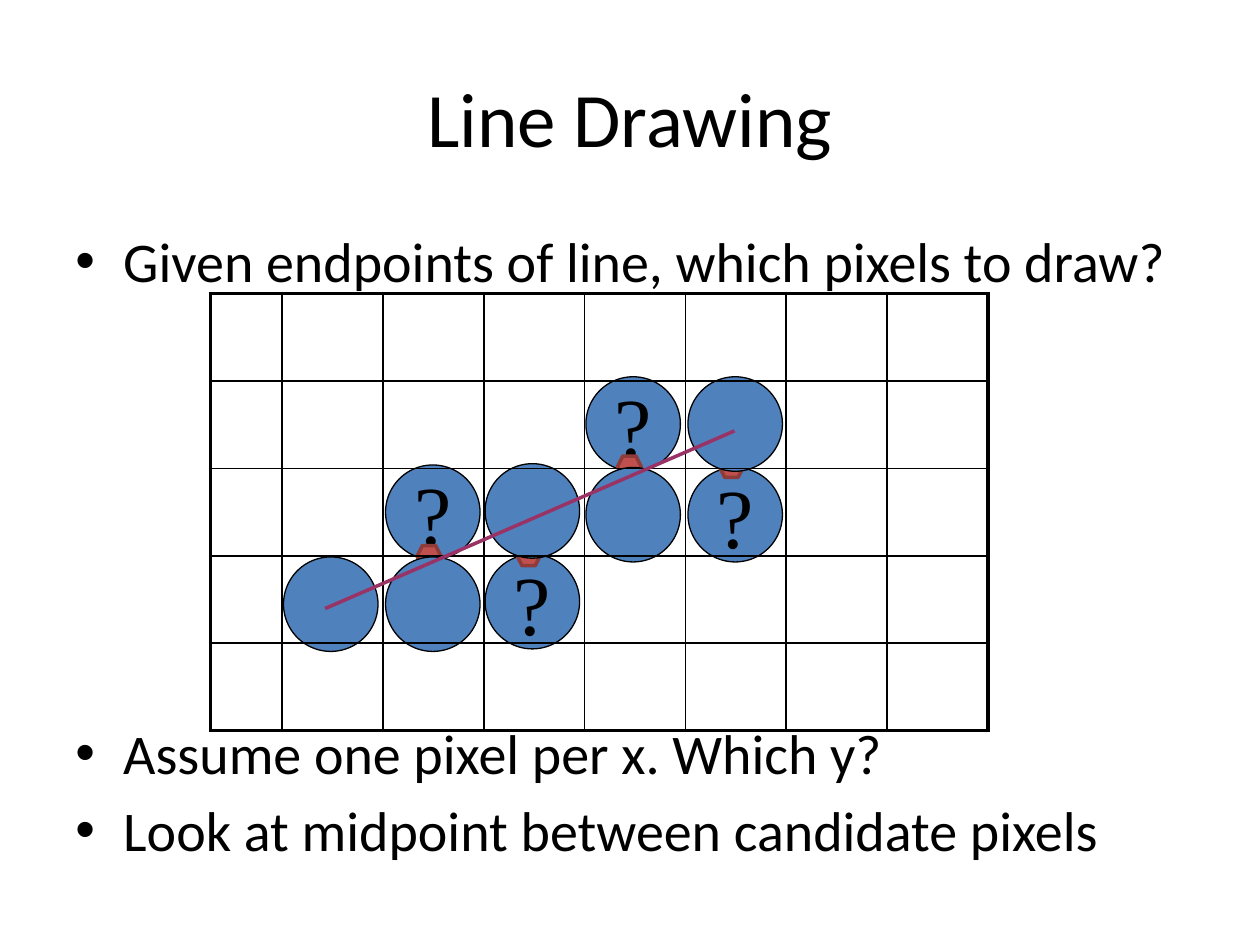
import dataclasses

import pptx
import pptx.dml.color
import pptx.enum.shapes
import pptx.enum.text
import pptx.oxml
import pptx.oxml.ns
import pptx.util
from lxml import etree

EMU_PER_PX = 9144  # 100 px to the inch
SHAPES = pptx.enum.shapes.MSO_SHAPE
ALIGN = pptx.enum.text.PP_ALIGN
ANCHOR = pptx.enum.text.MSO_ANCHOR


@dataclasses.dataclass(frozen=True)
class Theme:
    ink: str = "000000"
    pixel: str = "4F81BD"
    midpoint: str = "C0504D"
    midpoint_edge: str = "8E3B39"
    ideal_line: str = "993366"
    font: str = "Calibri"
    mark_font: str = "Times New Roman"
    title_size: int = 44
    body_size: int = 32
    mark_size: int = 48
    thin: float = 0.75
    grid: float = 1
    bold: float = 2
    frame: float = 2.25


def px(length):
    return pptx.util.Emu(length * EMU_PER_PX)


def rgb(color):
    return pptx.dml.color.RGBColor.from_string(color)


def write(paragraph, text, *, font, size, color, align=ALIGN.LEFT, before=0, bullet=False):
    paragraph.alignment = align
    paragraph.space_before = pptx.util.Pt(before)
    run = paragraph.add_run()
    run.text = text
    run.font.name = font
    run.font.size = pptx.util.Pt(size)
    run.font.color.rgb = rgb(color)
    if bullet:
        props = paragraph._p.get_or_add_pPr()
        props.set("marL", str(px(38)))
        props.set("indent", str(px(-38)))
        etree.SubElement(props, pptx.oxml.ns.qn("a:buFont"), typeface="Arial")
        etree.SubElement(props, pptx.oxml.ns.qn("a:buChar"), char="•")


class SlideBuilder:
    def __init__(self, slide, theme):
        self.slide = slide
        self.theme = theme

    def text_box(self, left, top, width, height, lines, *, anchor=ANCHOR.TOP, gap=0, **style):
        box = self.slide.shapes.add_textbox(px(left), px(top), px(width), px(height))
        frame = box.text_frame
        frame.word_wrap = True
        frame.vertical_anchor = anchor
        for index, line in enumerate(lines):
            paragraph = frame.add_paragraph() if index else frame.paragraphs[0]
            write(paragraph, line, font=self.theme.font, color=self.theme.ink,
                  before=gap if index else 0, **style)

    def shape(self, kind, left, top, width, height, fill, edge, weight, parent=None):
        shapes = (parent or self.slide).shapes
        shape = shapes.add_shape(kind, px(left), px(top), px(width), px(height))
        shape.shadow.inherit = False
        shape.fill.solid()
        shape.fill.fore_color.rgb = rgb(fill)
        shape.line.color.rgb = rgb(edge)
        shape.line.width = pptx.util.Pt(weight)
        return shape

    def pixel(self, left, top, parent=None):
        theme = self.theme
        return self.shape(SHAPES.OVAL, left, top, 75, 75, theme.pixel, theme.ink,
                          theme.thin, parent)

    def candidate(self, left, top, midpoint_top):
        """A questioned pixel grouped with the midpoint to test."""
        theme = self.theme
        group = self.slide.shapes.add_group_shape()
        frame = self.pixel(left, top, group).text_frame
        frame.word_wrap = False
        frame.vertical_anchor = ANCHOR.MIDDLE
        write(frame.paragraphs[0], "?", font=theme.mark_font, size=theme.mark_size,
              color=theme.ink, align=ALIGN.CENTER)
        self.shape(SHAPES.HEXAGON, left + 25, midpoint_top, 19, 17, theme.midpoint,
                   theme.midpoint_edge, theme.bold, group)

    def border(self, cell, sides):
        props = cell._tc.get_or_add_tcPr()
        for index, (side, weight) in enumerate(sides.items()):
            props.insert(index, pptx.oxml.parse_xml(
                f'<a:ln{side} {pptx.oxml.ns.nsdecls("a")} w="{pptx.util.Pt(weight)}">'
                f'<a:solidFill><a:srgbClr val="{self.theme.ink}"/></a:solidFill></a:ln{side}>'))

    def grid(self, left, top, widths, height, rows):
        table = self.slide.shapes.add_table(
            rows, len(widths), px(left), px(top), px(sum(widths)), px(height)).table
        table.first_row = table.horz_banding = False
        for column, width in zip(table.columns, widths):
            column.width = px(width)
        for row in table.rows:
            row.height = px(height) // rows
        inner, outer = self.theme.grid, self.theme.frame
        last_row, last_column = rows - 1, len(widths) - 1
        for r in range(rows):
            for c in range(len(widths)):
                cell = table.cell(r, c)
                cell.fill.background()
                self.border(cell, {"L": outer if c == 0 else inner,
                                   "R": outer if c == last_column else inner,
                                   "T": outer if r == 0 else inner,
                                   "B": outer if r == last_row else inner})

    def line(self, x1, y1, x2, y2, color, weight):
        line = self.slide.shapes.add_connector(
            pptx.enum.shapes.MSO_CONNECTOR.STRAIGHT, px(x1), px(y1), px(x2), px(y2))
        line.line.color.rgb = rgb(color)
        line.line.width = pptx.util.Pt(weight)
        etree.SubElement(line._element.spPr, pptx.oxml.ns.qn("a:effectLst"))


def main():
    deck = pptx.Presentation()
    deck.slide_width, deck.slide_height = px(1000), px(750)
    theme = Theme()
    page = SlideBuilder(deck.slides.add_slide(deck.slide_layouts[6]), theme)

    # Title and bullets above and below the grid
    page.text_box(50, 30, 900, 125, ["Line Drawing"], anchor=ANCHOR.MIDDLE,
                  size=theme.title_size, align=ALIGN.CENTER)
    bullets = {"size": theme.body_size, "bullet": True, "gap": 6}
    page.text_box(50, 175, 900, 58, ["Given endpoints of line, which pixels to draw?"], **bullets)
    page.text_box(50, 565, 900, 125, ["Assume one pixel per x. Which y?",
                                      "Look at midpoint between candidate pixels"], **bullets)

    # Rejected candidates with their midpoints, then the drawn pixels over them
    for left, top, midpoint_top in [(546, 371, 362), (306, 369, 433),
                                    (385, 440, 432), (465, 299, 362)]:
        page.candidate(left, top, midpoint_top)
    for left, top in [(225, 442), (306, 442), (385, 368), (465, 371), (546, 299)]:
        page.pixel(left, top)

    # Pixel grid and the ideal line
    page.grid(167, 233, [57] + [80] * 7, 347, rows=5)
    page.line(258, 483, 583, 342, theme.ideal_line, theme.bold)

    deck.save("out.pptx")


if __name__ == "__main__":
    main()
